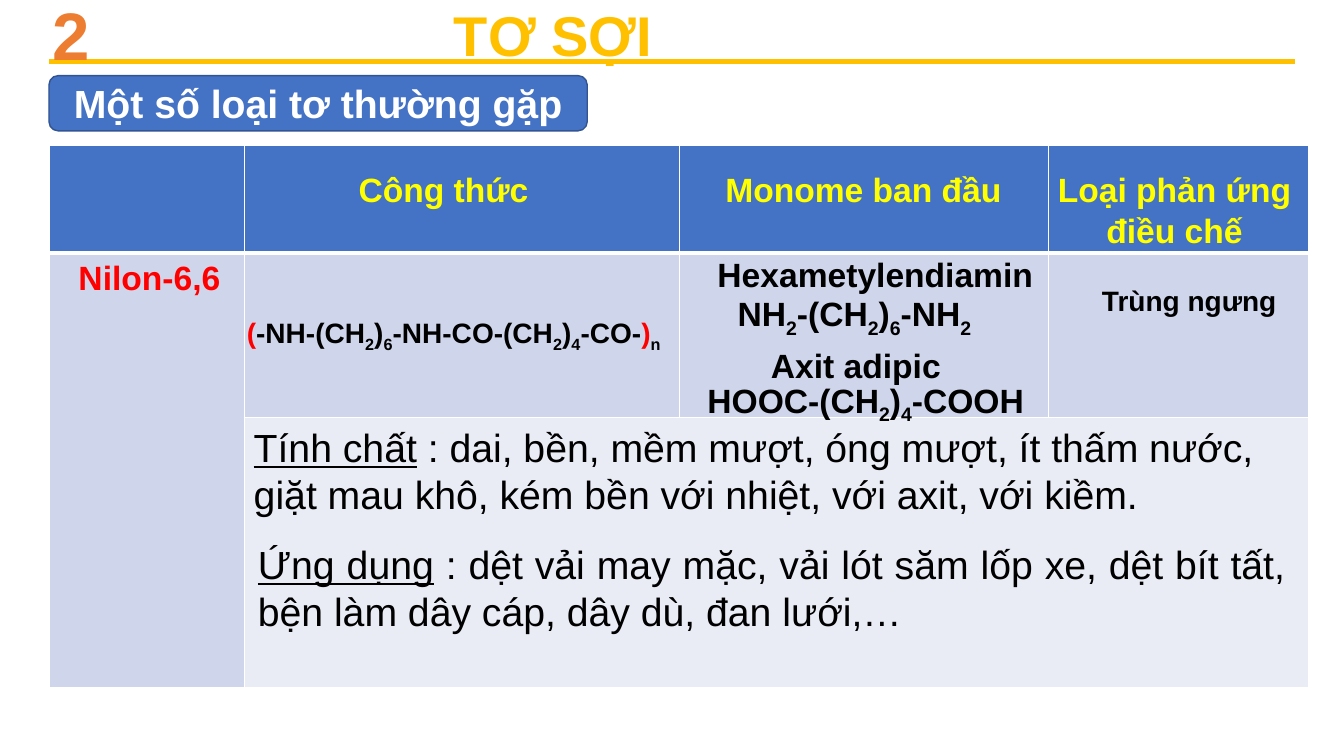
from lxml.etree import SubElement
from pptx import Presentation
from pptx.dml.color import RGBColor
from pptx.enum.shapes import MSO_CONNECTOR, MSO_SHAPE
from pptx.enum.text import MSO_ANCHOR, MSO_AUTO_SIZE, PP_ALIGN
from pptx.oxml.ns import qn
from pptx.util import Pt

BLUE, PALE, PALEST, WHITE = "4472C4", "CFD5EA", "E9EBF5", "FFFFFF"
GOLD, ORANGE, YELLOW, RED, BLACK = "FFC000", "ED7D31", "FFFF00", "FF0000", "000000"

TITLE = ["TƠ SỢI"]
SUBTITLE = ["Một số loại tơ thường gặp"]

# A character after "_" is a subscript; a tuple holds a run and its own format.
HEADER = dict(size=24, color=YELLOW, bold=True)
MONOMER = dict(size=24, bold=True)
PROSE = dict(size=28)
UNDERLINED = dict(underline=True)
IN_RED = dict(color=RED)
LABELS = [  # left, top, width, height, paragraphs, format
    (30.2, -8.6, 50, 65, ["2"], dict(size=48, color=ORANGE, bold=True)),
    (249, 117.4, 167, 36, ["Công thức"], HEADER),
    (511, 117.4, 215, 36, ["Monome ban đầu"], HEADER),
    (745, 117.4, 188, 65, ["Loại phản ứng", "điều chế"],
     dict(HEADER, align=PP_ALIGN.CENTER)),
    (49, 180, 138, 36, ["Nilon-6,6"], dict(size=24, color=RED, bold=True)),
    (780, 198.7, 145, 32, ["Trùng ngưng"], dict(size=20, bold=True)),
    (169.2, 221.8, 315, 32,
     [[("(", IN_RED), "-NH-(CH_2)_6-NH-CO-(CH_2)_4-CO-", (")", IN_RED), "_n"]],
     dict(size=20, bold=True)),
    (505.4, 177.8, 248, 36, ["Hexametylendiamin"], MONOMER),
    (519.8, 206, 216, 36, ["NH_2-(CH_2)_6-NH_2"], MONOMER),
    (543.6, 242.6, 138, 36, ["Axit adipic"], MONOMER),
    (498.2, 267.8, 251, 36, ["HOOC-(CH_2)_4-COOH"], MONOMER),
    (174.2, 298.8, 767, 75,
     [[("Tính chất", UNDERLINED),
       " : dai, bền, mềm mượt, óng mượt, ít thấm nước, "
       "giặt mau khô, kém bền với nhiệt, với axit, với kiềm."]], PROSE),
    (177.1, 382.3, 748, 75,
     [[("Ứng dụng", UNDERLINED),
       " : dệt vải may mặc, vải lót săm lốp xe, dệt bít tất, "
       "bện làm dây cáp, dây dù, đan lưới,…"]],
     dict(PROSE, align=PP_ALIGN.JUSTIFY)),
]

TABLE_LEFT, TABLE_TOP = 35.5, 104
COLUMN_WIDTHS = [139, 311, 263.5, 185.8]
ROW_HEIGHTS = [76.5, 117.5, 193.5]
ROW_FILLS = [BLUE, PALE, PALEST]
THIN, THICK = 1, 3


def rgb(value):
    return RGBColor.from_string(value)


def split_subscripts(text):
    """Yield (piece, is_subscript) pairs."""
    first, *rest = text.split("_")
    yield first, False
    for part in rest:
        yield part[0], True
        yield part[1:], False


def write(frame, paragraphs, size, color=BLACK, bold=False, underline=False,
          align=PP_ALIGN.LEFT, anchor=MSO_ANCHOR.TOP):
    frame.word_wrap = True
    frame.auto_size = MSO_AUTO_SIZE.NONE
    frame.vertical_anchor = anchor
    for number, runs in enumerate(paragraphs):
        paragraph = frame.paragraphs[0] if number == 0 else frame.add_paragraph()
        paragraph.alignment = align
        for item in [runs] if isinstance(runs, str) else runs:
            text, own = (item, {}) if isinstance(item, str) else item
            for piece, subscript in split_subscripts(text):
                if not piece:
                    continue
                run = paragraph.add_run()
                run.text = piece
                font = run.font
                font.name, font.size, font.bold = "Arial", Pt(size), bold
                font.underline = own.get("underline", underline)
                font.color.rgb = rgb(own.get("color", color))
                if subscript:
                    run._r.get_or_add_rPr().set("baseline", "-25000")


def add_border(cell, side, width):
    line = SubElement(cell._tc.get_or_add_tcPr(), qn(f"a:ln{side}"), w=str(Pt(width)))
    fill = SubElement(line, qn("a:solidFill"))
    SubElement(fill, qn("a:srgbClr"), val=WHITE)


def add_fibre_table(slide):
    table = slide.shapes.add_table(
        len(ROW_HEIGHTS), len(COLUMN_WIDTHS), Pt(TABLE_LEFT), Pt(TABLE_TOP),
        Pt(sum(COLUMN_WIDTHS)), Pt(sum(ROW_HEIGHTS))).table
    for column, width in zip(table.columns, COLUMN_WIDTHS):
        column.width = Pt(width)
    for r, (height, fill) in enumerate(zip(ROW_HEIGHTS, ROW_FILLS)):
        table.rows[r].height = Pt(height)
        for c in range(len(COLUMN_WIDTHS)):
            cell = table.cell(r, c)
            for side in "LRTB":
                under_header = (r, side) in [(0, "B"), (1, "T")]
                add_border(cell, side, THICK if under_header else THIN)
            cell.fill.solid()
            cell.fill.fore_color.rgb = rgb(fill)
    table.cell(1, 0).merge(table.cell(2, 0))
    table.cell(2, 1).merge(table.cell(2, 3))


def main():
    deck = Presentation()
    deck.slide_width, deck.slide_height = Pt(960), Pt(540)
    slide = deck.slides.add_slide(deck.slide_layouts[5])
    shapes = slide.shapes

    add_fibre_table(slide)

    rule = shapes.add_connector(MSO_CONNECTOR.STRAIGHT, Pt(35), Pt(44), Pt(925), Pt(44))
    rule.line.color.rgb = rgb(GOLD)
    rule.line.width = Pt(3)
    SubElement(rule._element.spPr, qn("a:effectLst"))

    title = shapes.title
    title.left, title.top, title.width, title.height = Pt(317), Pt(-3), Pt(253), Pt(55)
    write(title.text_frame, TITLE, size=40, color=GOLD, bold=True)

    banner = shapes.add_shape(MSO_SHAPE.ROUNDED_RECTANGLE, Pt(35), Pt(54), Pt(384.5), Pt(39.5))
    banner.shadow.inherit = False
    banner.fill.solid()
    banner.fill.fore_color.rgb = rgb(BLUE)
    banner.line.color.rgb = rgb("325491")
    banner.line.width = Pt(1)
    write(banner.text_frame, SUBTITLE, size=28, color=WHITE, bold=True,
          align=PP_ALIGN.CENTER, anchor=MSO_ANCHOR.MIDDLE)

    for left, top, width, height, paragraphs, style in LABELS:
        box = shapes.add_textbox(Pt(left), Pt(top), Pt(width), Pt(height))
        write(box.text_frame, paragraphs, **style)

    deck.save("out.pptx")


if __name__ == "__main__":
    main()
